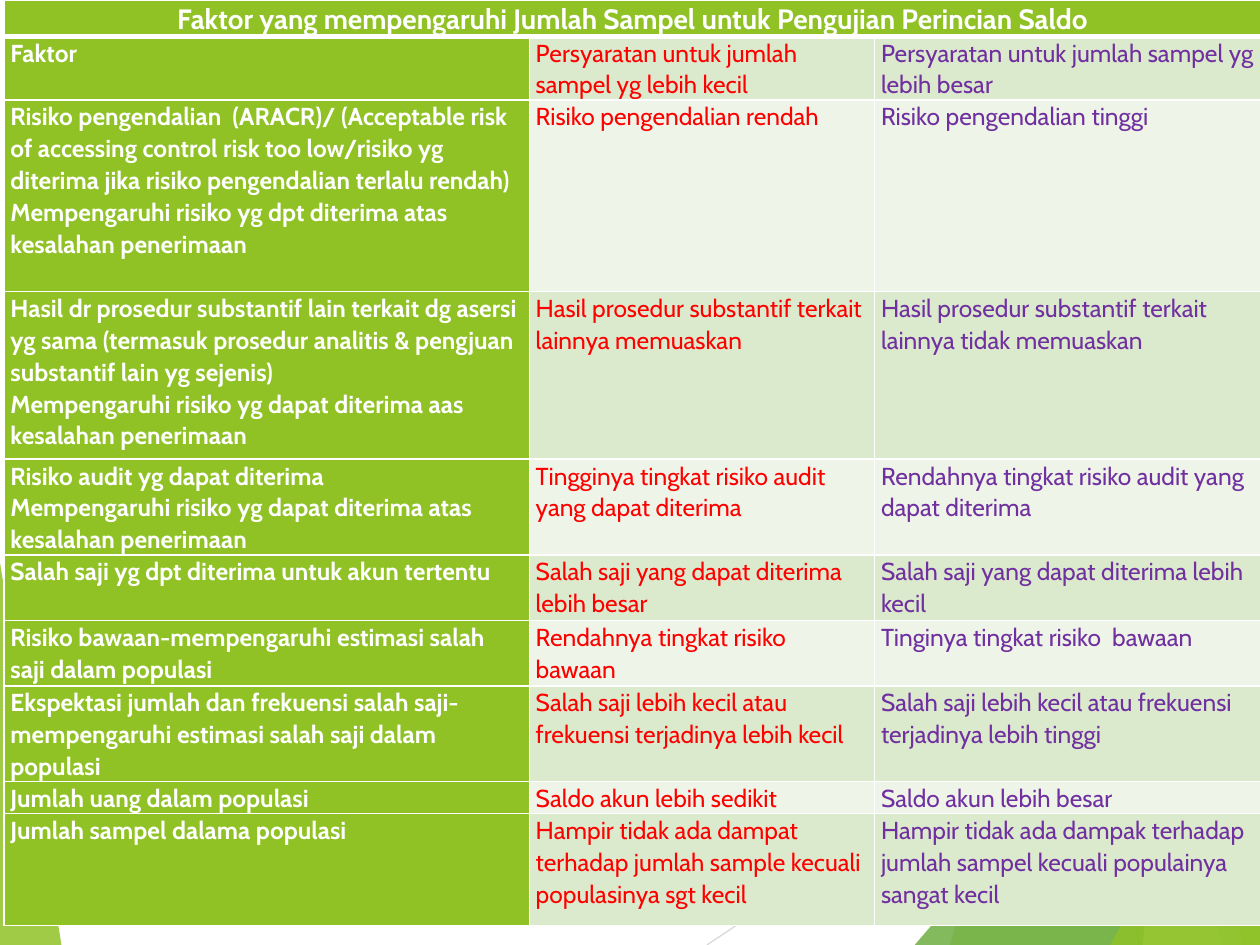
from lxml import etree
from pptx import Presentation
from pptx import util as u
from pptx.dml.color import RGBColor
from pptx.enum import shapes, text
from pptx.oxml import ns

GREEN = RGBColor(0x90, 0xC2, 0x26)
LEAF = RGBColor(0x54, 0xA0, 0x21)
DARK = RGBColor(0x3F, 0x78, 0x19)
LIME = RGBColor(0xC0, 0xE4, 0x74)
PALE = RGBColor(0xDB, 0xE9, 0xCD)
FAINT = RGBColor(0xEE, 0xF4, 0xE8)
WHITE = RGBColor(0xFF, 0xFF, 0xFF)
RED = RGBColor(0xFF, 0x00, 0x00)
PURPLE = RGBColor(0x70, 0x30, 0xA0)
SILVER = RGBColor(0xD9, 0xD9, 0xD9)
GREY = RGBColor(0xBF, 0xBF, 0xBF)

# All lengths are in centimetres.
WIDE, HIGH = 25.4, 19.05
EDGE = 25.43
COLS = [10.59, 6.96, 7.8]
TITLE = "Faktor yang mempengaruhi Jumlah Sampel untuk Pengujian Perincian Saldo"
TITLE_HIGH = 0.61

# Row height, factor, smaller sample, larger sample
ROWS = [
    (1.22, "Faktor",
     "Persyaratan untuk jumlah sampel yg lebih kecil",
     "Persyaratan untuk jumlah sampel yg lebih besar"),
    (3.86, "Risiko pengendalian  (ARACR)/ (Acceptable risk of accessing control risk "
     "too low/risiko yg diterima jika risiko pengendalian terlalu rendah)\n"
     "Mempengaruhi risiko yg dpt diterima atas kesalahan penerimaan",
     "Risiko pengendalian rendah",
     "Risiko pengendalian tinggi"),
    (3.38, "Hasil dr prosedur substantif lain terkait dg asersi yg sama (termasuk "
     "prosedur analitis & pengjuan substantif lain yg sejenis)\n"
     "Mempengaruhi risiko yg dapat diterima aas kesalahan penerimaan",
     "Hasil prosedur substantif terkait lainnya memuaskan",
     "Hasil prosedur substantif terkait lainnya tidak memuaskan"),
    (1.68, "Risiko audit yg dapat diterima\n"
     "Mempengaruhi risiko yg dapat diterima atas kesalahan penerimaan",
     "Tingginya tingkat risiko audit yang dapat diterima",
     "Rendahnya tingkat risiko audit yang dapat diterima"),
    (1.32, "Salah saji yg dpt diterima untuk akun tertentu",
     "Salah saji yang dapat diterima lebih besar",
     "Salah saji yang dapat diterima lebih kecil"),
    (1.32, "Risiko bawaan-mempengaruhi estimasi salah saji dalam populasi",
     "Rendahnya tingkat risiko  bawaan",
     "Tinginya tingkat risiko  bawaan"),
    (1.12, "Ekspektasi jumlah dan frekuensi salah saji-mempengaruhi estimasi "
     "salah saji dalam populasi",
     "Salah saji lebih kecil atau frekuensi terjadinya lebih kecil",
     "Salah saji lebih kecil atau frekuensi terjadinya lebih tinggi"),
    (0.56, "Jumlah uang dalam populasi",
     "Saldo akun lebih sedikit",
     "Saldo akun lebih besar"),
    (2.26, "Jumlah sampel dalama populasi",
     "Hampir tidak ada dampat terhadap jumlah sample kecuali populasinya sgt kecil",
     "Hampir tidak ada dampak terhadap jumlah sampel kecuali populainya sangat kecil"),
]

# Start, end, colour
LINES = [
    ((14.25, HIGH), (EDGE, 11.61), SILVER),
    ((19.56, 0), (22.96, HIGH), GREY),
]

# Fill, opacity in percent, corners
FACETS = [
    (GREEN, 85, [(-0.03, 11.15), (1.24, HIGH), (-0.03, HIGH)]),
    (GREEN, 30, [(24.77, 0), (19.15, HIGH), (EDGE, HIGH), (EDGE, 0)]),
    (GREEN, 20, [(20.02, 0), (23.34, HIGH), (EDGE, HIGH), (EDGE, 0)]),
    (LEAF, 72, [(18.44, HIGH), (EDGE, 10.9), (EDGE, HIGH)]),
    (DARK, 70, [(19.48, 0), (24.64, HIGH), (EDGE, HIGH), (EDGE, 0)]),
    (LIME, 70, [(24.92, 0), (23.04, HIGH), (EDGE, HIGH), (EDGE, 0)]),
    (GREEN, 65, [(22.43, 0), (25.04, HIGH), (WIDE, HIGH), (25.35, 0)]),
    (GREEN, 80, [(22.38, HIGH), (EDGE, 13.59), (EDGE, HIGH)]),
]


def add_line(slide, start, end, color):
    ends = [u.Cm(n) for n in start + end]
    line = slide.shapes.add_connector(shapes.MSO_CONNECTOR.STRAIGHT, *ends)
    line.line.color.rgb = color
    line.line.width = u.Pt(0.75)
    etree.SubElement(line._element.spPr, ns.qn("a:effectLst"))


def add_facet(slide, color, alpha, points):
    first, *rest = [(u.Cm(x), u.Cm(y)) for x, y in points]
    form = slide.shapes.build_freeform(*first)
    form.add_line_segments(rest)
    facet = form.convert_to_shape()
    facet.shadow.inherit = False
    facet.line.fill.background()
    facet.fill.solid()
    facet.fill.fore_color.rgb = color
    tint = facet._element.spPr.find(".//" + ns.qn("a:srgbClr"))
    etree.SubElement(tint, ns.qn("a:alpha"), val=str(alpha * 1000))


def set_edges(cell, base):
    """Draw white cell borders; base is the width of the bottom one."""
    props = cell._tc.get_or_add_tcPr()
    for i, (tag, width) in enumerate([("lnL", 1), ("lnR", 1), ("lnT", 1), ("lnB", base)]):
        edge = etree.Element(ns.qn("a:" + tag), w=str(u.Pt(width)))
        fill = etree.SubElement(edge, ns.qn("a:solidFill"))
        etree.SubElement(fill, ns.qn("a:srgbClr"), val=str(WHITE))
        props.insert(i, edge)


def write(cell, words, fill, color, size=14, bold=False, align=None, base=1):
    cell.margin_left = cell.margin_right = u.Cm(0.13)
    cell.margin_top = cell.margin_bottom = u.Cm(0)
    cell.fill.solid()
    cell.fill.fore_color.rgb = fill
    set_edges(cell, base)
    cell.text_frame.text = words
    for para in cell.text_frame.paragraphs:
        para.alignment = align
        para.line_spacing = 1.07
        font = para.runs[0].font
        font.name, font.size, font.bold = "Cabin", u.Pt(size), bold
        font.color.rgb = color


def add_grid(slide):
    highs = [TITLE_HIGH] + [row[0] for row in ROWS]
    grid = slide.shapes.add_table(
        len(highs), len(COLS), u.Cm(0.08), u.Cm(0),
        u.Cm(sum(COLS)), u.Cm(sum(highs))).table
    for col, width in zip(grid.columns, COLS):
        col.width = u.Cm(width)
    for row, high in zip(grid.rows, highs):
        row.height = u.Cm(high)

    for c in range(len(COLS)):
        set_edges(grid.cell(0, c), 3) if c else write(
            grid.cell(0, 0), TITLE, GREEN, WHITE, size=16, bold=True,
            align=text.PP_ALIGN.CENTER, base=3)
    grid.cell(0, 0).merge(grid.cell(0, len(COLS) - 1))

    for r, (_, factor, small, large) in enumerate(ROWS, 1):
        band = PALE if r % 2 else FAINT
        write(grid.cell(r, 0), factor, GREEN, WHITE, bold=True)
        write(grid.cell(r, 1), small, band, RED)
        write(grid.cell(r, 2), large, band, PURPLE)


def main():
    deck = Presentation()
    deck.slide_width, deck.slide_height = u.Cm(WIDE), u.Cm(HIGH)
    slide = deck.slides.add_slide(deck.slide_layouts[6])
    left, *right = FACETS
    add_facet(slide, *left)
    for line in LINES:
        add_line(slide, *line)
    for facet in right:
        add_facet(slide, *facet)
    add_grid(slide)
    deck.save("out.pptx")


if __name__ == "__main__":
    main()
